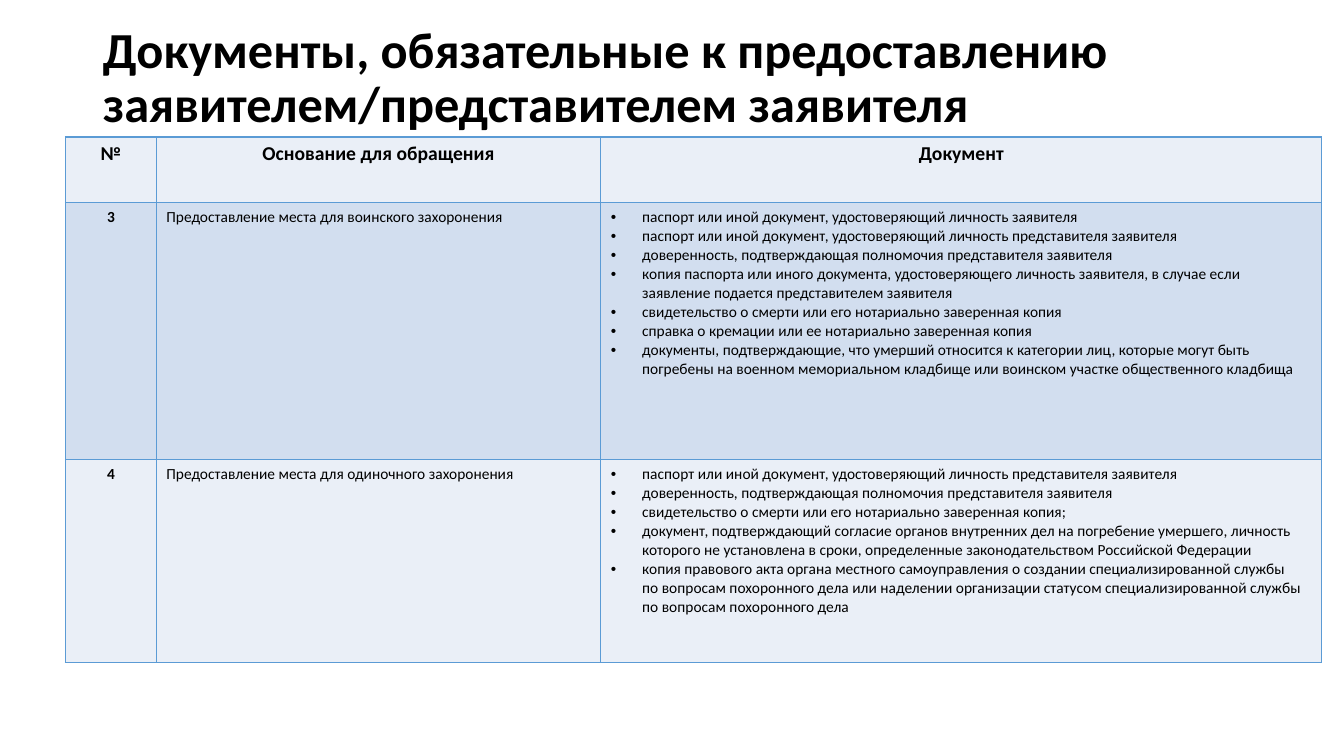
from dataclasses import dataclass

from lxml import etree
from pptx import Presentation, util as u
from pptx.dml.color import RGBColor
from pptx.enum import text
from pptx.oxml.ns import qn

FONT, BLACK, BORDER = "Calibri", "000000", "5B9BD5"
LIGHT, DARK = "EAEFF7", "D2DEEF"
SLIDE_W, SLIDE_H = u.Inches(13.33), u.Inches(7.5)
BULLET_INDENT = u.Inches(0.31)

# Shares of the slide's width and height, in percent
TITLE_BOX = (6.9, 0.8, 89.42, 19.33)
TABLE_LEFT, TABLE_TOP = 4.88, 18.13
COL_SHARES = (6.75, 33.08, 53.64)
HEADER_SHARE = 8.67
HEADERS = ("№", "Основание для обращения", "Документ")


@dataclass
class Request:
    number: str
    reason: str
    documents: list[str]
    height: float
    fill: str


# Documents named under more than one reason
AGENT_PASSPORT = "паспорт или иной документ, удостоверяющий личность представителя заявителя"
WARRANT = "доверенность, подтверждающая полномочия представителя заявителя"
DEATH_RECORD = "свидетельство о смерти или его нотариально заверенная копия"

REQUESTS = [
    Request("3", "Предоставление места для воинского захоронения", [
        "паспорт или иной документ, удостоверяющий личность заявителя",
        AGENT_PASSPORT,
        WARRANT,
        "копия паспорта или иного документа, удостоверяющего личность заявителя, "
        "в случае если заявление подается представителем заявителя",
        DEATH_RECORD,
        "справка о кремации или ее нотариально заверенная копия",
        "документы, подтверждающие, что умерший относится к категории лиц, которые могут быть "
        "погребены на военном мемориальном кладбище или воинском участке общественного кладбища",
    ], 34, DARK),
    Request("4", "Предоставление места для одиночного захоронения", [
        AGENT_PASSPORT,
        WARRANT,
        DEATH_RECORD + ";",
        "документ, подтверждающий согласие органов внутренних дел на погребение умершего, личность "
        "которого не установлена в сроки, определенные законодательством Российской Федерации",
        "копия правового акта органа местного самоуправления о создании специализированной службы \n"
        "по вопросам похоронного дела или наделении организации статусом специализированной службы "
        "по вопросам похоронного дела",
    ], 26.8, LIGHT),
]


def across(share: float) -> int:
    return round(SLIDE_W * share / 100)


def down(share: float) -> int:
    return round(SLIDE_H * share / 100)


def rgb(value: str) -> RGBColor:
    return RGBColor.from_string(value)


def add_text(p, words: str, size: float, bold: bool = False) -> None:
    for i, line in enumerate(words.split("\n")):
        if i:
            p.add_line_break()
        r = p.add_run()
        r.text = line
        r.font.name, r.font.size, r.font.bold = FONT, u.Pt(size), bold
        r.font.color.rgb = rgb(BLACK)


def add_bullet(p) -> None:
    pPr = p._p.get_or_add_pPr()
    pPr.set("marL", str(BULLET_INDENT))
    pPr.set("indent", str(-BULLET_INDENT))
    etree.SubElement(pPr, qn("a:buFont"), typeface="Arial")
    etree.SubElement(pPr, qn("a:buChar"), char="•")


def style_cell(cell, fill: str) -> None:
    cell.fill.solid()
    cell.fill.fore_color.rgb = rgb(fill)
    tcPr = cell._tc.get_or_add_tcPr()
    for i, side in enumerate("LRTB"):
        ln = etree.Element(qn(f"a:ln{side}"), w=str(u.Pt(1)))
        solid = etree.SubElement(ln, qn("a:solidFill"))
        etree.SubElement(solid, qn("a:srgbClr"), val=BORDER)
        tcPr.insert(i, ln)


def fill_cell(cell, lines: list[str], fill: str, size: float = 11, bold: bool = False,
              centred: bool = False, bullets: bool = False) -> None:
    style_cell(cell, fill)
    tf = cell.text_frame
    for i, line in enumerate(lines):
        p = tf.add_paragraph() if i else tf.paragraphs[0]
        p.alignment = text.PP_ALIGN.CENTER if centred else text.PP_ALIGN.LEFT
        if bullets:
            add_bullet(p)
        add_text(p, line, size, bold)


def add_title(s) -> None:
    sp = s.shapes.title
    left, top, width, height = TITLE_BOX
    sp.left, sp.top, sp.width, sp.height = across(left), down(top), across(width), down(height)
    tf = sp.text_frame
    tf.word_wrap = True
    tf.auto_size = text.MSO_AUTO_SIZE.NONE
    tf.vertical_anchor = text.MSO_ANCHOR.MIDDLE
    p = tf.paragraphs[0]
    p.alignment, p.line_spacing = text.PP_ALIGN.LEFT, 0.9
    add_text(p, "Документы, обязательные к предоставлению заявителем/представителем заявителя",
             36, bold=True)


def add_requests(s) -> None:
    heights = [HEADER_SHARE] + [request.height for request in REQUESTS]
    table = s.shapes.add_table(len(heights), len(COL_SHARES), across(TABLE_LEFT), down(TABLE_TOP),
                               across(sum(COL_SHARES)), down(sum(heights))).table
    for column, share in zip(table.columns, COL_SHARES):
        column.width = across(share)
    for row, share in zip(table.rows, heights):
        row.height = down(share)

    # Header row
    for col, header in enumerate(HEADERS):
        fill_cell(table.cell(0, col), [header], LIGHT, 14, bold=True, centred=True)

    # One row per request
    for row, request in enumerate(REQUESTS, 1):
        fill_cell(table.cell(row, 0), [request.number], request.fill, bold=True, centred=True)
        fill_cell(table.cell(row, 1), [request.reason], request.fill)
        fill_cell(table.cell(row, 2), request.documents, request.fill, bullets=True)


def main() -> None:
    prs = Presentation()
    prs.slide_width, prs.slide_height = SLIDE_W, SLIDE_H
    s = prs.slides.add_slide(prs.slide_layouts.get_by_name("Title Only"))
    add_title(s)
    add_requests(s)
    prs.save("out.pptx")


if __name__ == "__main__":
    main()
